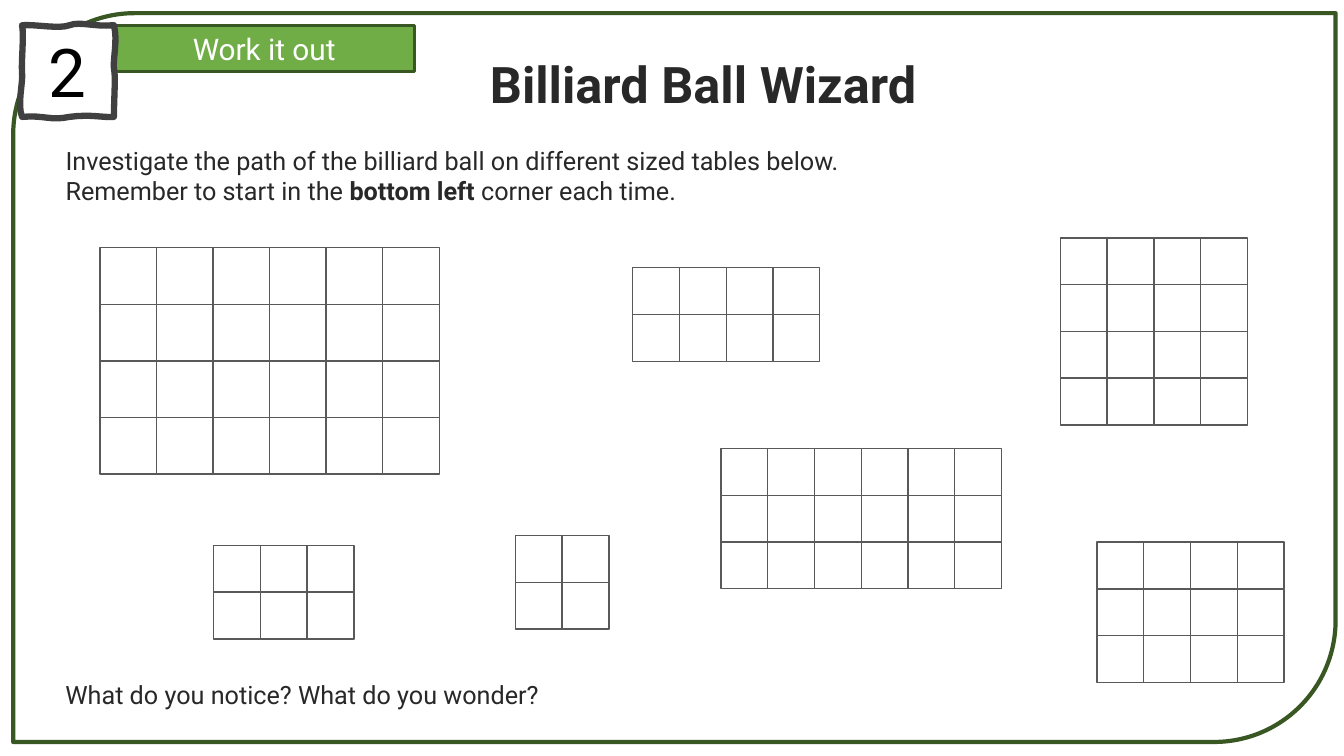
"""Build the Billiard Ball Wizard worksheet slide."""
from lxml.etree import SubElement
from pptx import Presentation
from pptx.dml.color import RGBColor
from pptx.enum.shapes import MSO_SHAPE
from pptx.enum.text import MSO_ANCHOR, MSO_AUTO_SIZE, PP_ALIGN
from pptx.oxml.ns import qn
from pptx.util import Pt

FONT = "Roboto"
WHITE = RGBColor(0xFF, 0xFF, 0xFF)
BLACK = RGBColor(0, 0, 0)
INK = RGBColor(0x28, 0x28, 0x28)
DARK_GREEN = RGBColor(0x38, 0x57, 0x23)
GREEN = RGBColor(0x70, 0xAD, 0x47)
BADGE_EDGE = RGBColor(0x40, 0x40, 0x40)
GRID_GREY = RGBColor(0x59, 0x59, 0x59)

SMALL, LARGE = 33.4, 40.4
TABLES = [
    (757.4, 169.9, 4, 4, SMALL),
    (71.4, 177, 6, 4, LARGE),
    (368.2, 382.6, 2, 2, SMALL),
    (152.6, 389.6, 3, 2, SMALL),
    (515, 320.4, 6, 3, SMALL),
    (452, 191.3, 4, 2, SMALL),
    (783.6, 387.2, 4, 3, SMALL),
]

BADGE_START = (15.8, 18)
BADGE_CURVES = [
    ((25.9, 17.3), (42.5, 20.9), (49.7, 18)),
    ((57.6, 15.1), (67, 19.4), (81.4, 18)),
    ((84.2, 28.8), (80.6, 42.5), (81.4, 49)),
    ((82.8, 55.4), (81.4, 68.4), (81.4, 83.5)),
    ((74.2, 84.2), (64.8, 81.4), (49.7, 83.5)),
    ((35.3, 86.4), (32.4, 82.1), (15.8, 83.5)),
    ((12.2, 74.9), (16.6, 59), (15.8, 51.8)),
    ((15.1, 44.6), (17.3, 25.2), (15.8, 18)),
]


def curve_points(start, curves, steps=8):
    """Return points along a chain of cubic curves."""
    points = []
    for first, second, end in curves:
        for step in range(1, steps + 1):
            t = step / steps
            weights = ((1 - t) ** 3, 3 * t * (1 - t) ** 2, 3 * t ** 2 * (1 - t), t ** 3)
            corners = (start, first, second, end)
            points.append(tuple(
                Pt(sum(w * corner[axis] for w, corner in zip(weights, corners)))
                for axis in (0, 1)))
        start = end
    return points


def style_outline(shape, colour, width, fill=None):
    """Set the line and fill of a shape and drop its shadow."""
    shape.shadow.inherit = False
    shape.line.color.rgb = colour
    shape.line.width = Pt(width)
    if fill is None:
        shape.fill.background()
    else:
        shape.fill.solid()
        shape.fill.fore_color.rgb = fill


def write_text(shape, paragraphs, size, colour, align=PP_ALIGN.LEFT,
               anchor=MSO_ANCHOR.TOP, bold=False, wrap=True):
    """Write paragraphs of (text, bold) runs in one style."""
    frame = shape.text_frame
    frame.auto_size = MSO_AUTO_SIZE.NONE
    frame.word_wrap = wrap
    frame.vertical_anchor = anchor
    for index, runs in enumerate(paragraphs):
        paragraph = frame.add_paragraph() if index else frame.paragraphs[0]
        properties = paragraph._p.get_or_add_pPr()
        properties.set("marL", "0")
        properties.set("indent", "0")
        SubElement(properties, qn("a:buNone"))
        paragraph.alignment = align
        paragraph.space_before = Pt(0)
        font = paragraph.font
        font.name, font.size, font.bold = FONT, Pt(size), bold
        font.color.rgb = colour
        for text, strong in runs:
            run = paragraph.add_run()
            run.text = text
            if strong:
                run.font.bold = True


def place(shape, left, top, width, height):
    """Move and size a placeholder."""
    shape.left, shape.top = Pt(left), Pt(top)
    shape.width, shape.height = Pt(width), Pt(height)


def add_frame(slide):
    """Draw the green border with two rounded corners."""
    frame = slide.shapes.add_shape(
        MSO_SHAPE.ROUND_2_DIAG_RECTANGLE, Pt(9.4), Pt(9.4), Pt(944.6), Pt(520.6))
    style_outline(frame, DARK_GREEN, 3)


def add_banner(slide, label):
    """Draw the green activity label."""
    banner = slide.shapes.add_shape(
        MSO_SHAPE.RECTANGLE, Pt(81.4), Pt(18), Pt(214.6), Pt(33.1))
    style_outline(banner, DARK_GREEN, 2.25, GREEN)
    write_text(banner, [[(label, False)]], 21.3, WHITE, PP_ALIGN.CENTER, MSO_ANCHOR.MIDDLE)


def add_badge(slide, number):
    """Draw the hand-sketched number square."""
    builder = slide.shapes.build_freeform(*(Pt(value) for value in BADGE_START))
    builder.add_line_segments(curve_points(BADGE_START, BADGE_CURVES), close=True)
    badge = builder.convert_to_shape()
    style_outline(badge, BADGE_EDGE, 4.5, WHITE)
    write_text(badge, [[(number, False)]], 48, BLACK, PP_ALIGN.CENTER, MSO_ANCHOR.MIDDLE)


def add_billiard_table(slide, left, top, columns, rows, side):
    """Draw one billiard table as a group of squares."""
    table = slide.shapes.add_group_shape()
    for row in range(rows):
        for column in range(columns):
            square = table.shapes.add_shape(
                MSO_SHAPE.RECTANGLE, Pt(left + column * side), Pt(top + row * side),
                Pt(side), Pt(side))
            style_outline(square, GRID_GREY, 1)


def main():
    """Assemble and save the slide."""
    deck = Presentation()
    deck.slide_width, deck.slide_height = Pt(960), Pt(540)
    slide = deck.slides.add_slide(deck.slide_layouts[1])

    title, instructions = slide.placeholders
    place(title, 342.7, 34.6, 516.2, 51.1)
    write_text(title, [[("Billiard Ball Wizard", False)]], 36, INK, bold=True)
    place(instructions, 39.6, 100.1, 914.4, 51.1)
    write_text(instructions, [
        [("Investigate the path of the billiard ball on different sized tables below.", False)],
        [("Remember to start in the ", False), ("bottom left ", True),
         ("corner each time.", False)],
    ], 18, INK)

    add_frame(slide)
    add_banner(slide, "Work it out")
    add_badge(slide, "2")
    for table in TABLES:
        add_billiard_table(slide, *table)

    question = slide.shapes.add_textbox(Pt(39.6), Pt(481.7), Pt(450), Pt(28.8))
    write_text(question, [[("What do you notice? What do you wonder?", False)]],
               18, INK, wrap=False)
    deck.save("out.pptx")


if __name__ == "__main__":
    main()
